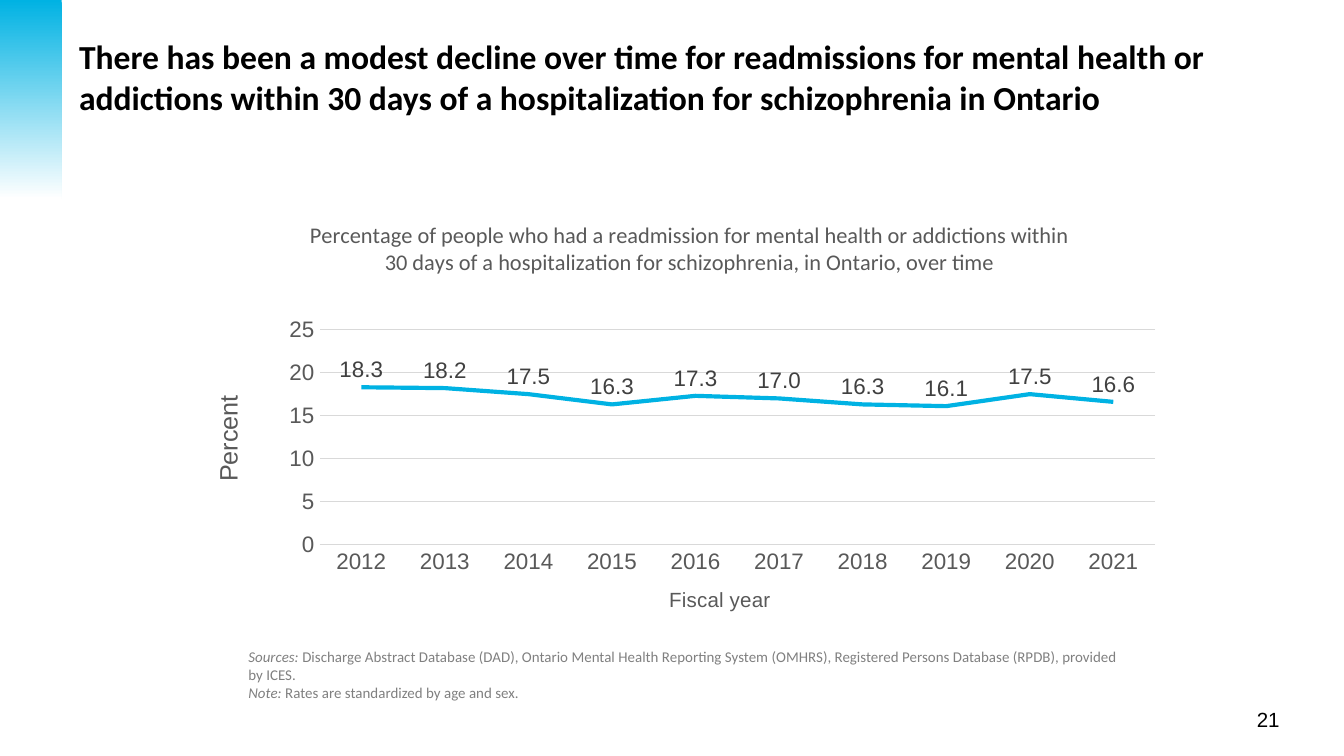
from lxml import etree
from pptx import Presentation
from pptx.chart.data import CategoryChartData
from pptx.dml.color import RGBColor
from pptx.enum import chart as ch, shapes, text
from pptx.oxml.ns import qn
from pptx.util import Inches, Pt

COLORS = {"accent": "00B2E3", "white": "FFFFFF", "black": "000000", "axis": "595959",
          "grid": "D9D9D9", "label": "404040", "note": "808080"}

HEADLINE = ("There has been a modest decline over time for readmissions for mental health or "
            "addictions within 30 days of a hospitalization for schizophrenia in Ontario")
CHART_TITLE = ("Percentage of people who had a readmission for mental health or addictions within "
               "30 days of a hospitalization for schizophrenia, in Ontario, over time")
FIRST_YEAR = 2012
RATES = [18.3, 18.2, 17.5, 16.3, 17.3, 17.0, 16.3, 16.1, 17.5, 16.6]
FOOTNOTES = [
    ("Sources: ", "Discharge Abstract Database (DAD), Ontario Mental Health Reporting System "
                  "(OMHRS), Registered Persons Database (RPDB), provided by ICES."),
    ("Note: ", "Rates are standardized by age and sex."),
]


def rgb(name):
    return RGBColor.from_string(COLORS[name])


def style(font, size, color, name="Arial", bold=False, italic=False):
    font.size, font.name, font.bold, font.italic = Pt(size), name, bold, italic
    font.color.rgb = rgb(color)


def add_text(slide, box, paragraphs, size, color, name="Calibri", bold=False,
             align=text.PP_ALIGN.LEFT):
    frame = slide.shapes.add_textbox(*map(Inches, box)).text_frame
    frame.word_wrap = True
    for index, runs in enumerate(paragraphs):
        paragraph = frame.paragraphs[0] if index == 0 else frame.add_paragraph()
        paragraph.alignment = align
        for words, italic in runs:
            run = paragraph.add_run()
            run.text = words
            style(run.font, size, color, name, bold, italic)


def place(element, **fractions):
    layout = element.find(qn("c:layout"))
    if layout is None:
        layout = etree.Element(qn("c:layout"))
        element.insert(0, layout)
    manual = etree.SubElement(layout, qn("c:manualLayout"))
    settings = {"xMode": "edge", "yMode": "edge", **fractions}
    if "w" in fractions:
        settings = {"layoutTarget": "inner", **settings}
    for key, value in settings.items():
        etree.SubElement(manual, qn("c:" + key)).set("val", str(value))


def set_title(owner, words, size, x, y, name="Arial"):
    owner.has_title = True
    title = owner.chart_title if hasattr(owner, "chart_title") else owner.axis_title
    run = title.text_frame.paragraphs[0].add_run()
    run.text = words
    style(run.font, size, "axis", name)
    place(title._element, x=x, y=y)


def set_line(line, color, width):
    line.color.rgb = rgb(color)
    line.width = Pt(width)


def add_rate_chart(slide):
    data = CategoryChartData(number_format="0.0")
    data.categories = [str(FIRST_YEAR + offset) for offset in range(len(RATES))]
    data.add_series("Series 1", RATES)
    chart = slide.shapes.add_chart(ch.XL_CHART_TYPE.LINE, Inches(1.51), Inches(1.48),
                                   Inches(7.23), Inches(3.28), data).chart
    chart.has_legend = False
    style(chart.font, 10, "black")
    set_title(chart, CHART_TITLE, 12, 0.106, 0.039, "Calibri")
    chart.chart_title.include_in_layout = False
    place(chart._chartSpace.find(".//" + qn("c:plotArea")), x=0.12, y=0.297, w=0.86, h=0.487)

    years, percent = chart.category_axis, chart.value_axis
    for axis in (years, percent):
        axis.major_tick_mark = axis.minor_tick_mark = ch.XL_TICK_MARK.NONE
        style(axis.tick_labels.font, 12, "axis")
    set_title(years, "Fiscal year", 11, 0.476, 0.869)
    set_title(percent, "Percent", 13.5, 0.005, 0.435)
    set_line(years.format.line, "grid", 0.75)
    percent.format.line.fill.background()
    percent.minimum_scale, percent.maximum_scale, percent.major_unit = 0, 25, 5
    percent.tick_labels.number_format = "0"
    percent.tick_labels.number_format_is_linked = False
    set_line(percent.major_gridlines.format.line, "grid", 0.75)

    plot = chart.plots[0]
    plot.vary_by_categories = False
    series = plot.series[0]
    series.smooth = False
    series.marker.style = ch.XL_MARKER_STYLE.NONE
    set_line(series.format.line, "accent", 2.25)
    labels = series.data_labels
    labels.show_value = True
    labels.position = ch.XL_LABEL_POSITION.ABOVE
    labels.number_format = "0.0"
    labels.number_format_is_linked = False
    style(labels.font, 12, "label")


def add_corner_band(slide):
    band = slide.shapes.add_shape(shapes.MSO_SHAPE.RECTANGLE, 0, 0, Inches(0.46), Inches(1.48))
    band.shadow.inherit = False
    band.line.fill.background()
    band.fill.gradient()
    band.fill.gradient_angle = 270
    for stop, position, color in zip(band.fill.gradient_stops, (0, 1), ("accent", "white")):
        stop.position = position
        stop.color.rgb = rgb(color)


def main():
    presentation = Presentation()
    presentation.slide_width = Inches(10)
    presentation.slide_height = presentation.slide_width * 9 // 16
    slide = presentation.slides.add_slide(presentation.slide_layouts[6])
    add_text(slide, (8.45, 5.21, 1.17, 0.29), [[("21", False)]], 11, "black", "Arial",
             align=text.PP_ALIGN.RIGHT)
    add_corner_band(slide)
    add_text(slide, (0.49, 0.22, 9.02, 0.74), [[(HEADLINE, False)]], 18, "black", bold=True)
    add_rate_chart(slide)
    footnotes = [[(lead, True), (body, False)] for lead, body in FOOTNOTES]
    add_text(slide, (1.75, 4.77, 6.76, 0.5), footnotes, 8, "note")
    presentation.save("out.pptx")


if __name__ == "__main__":
    main()
